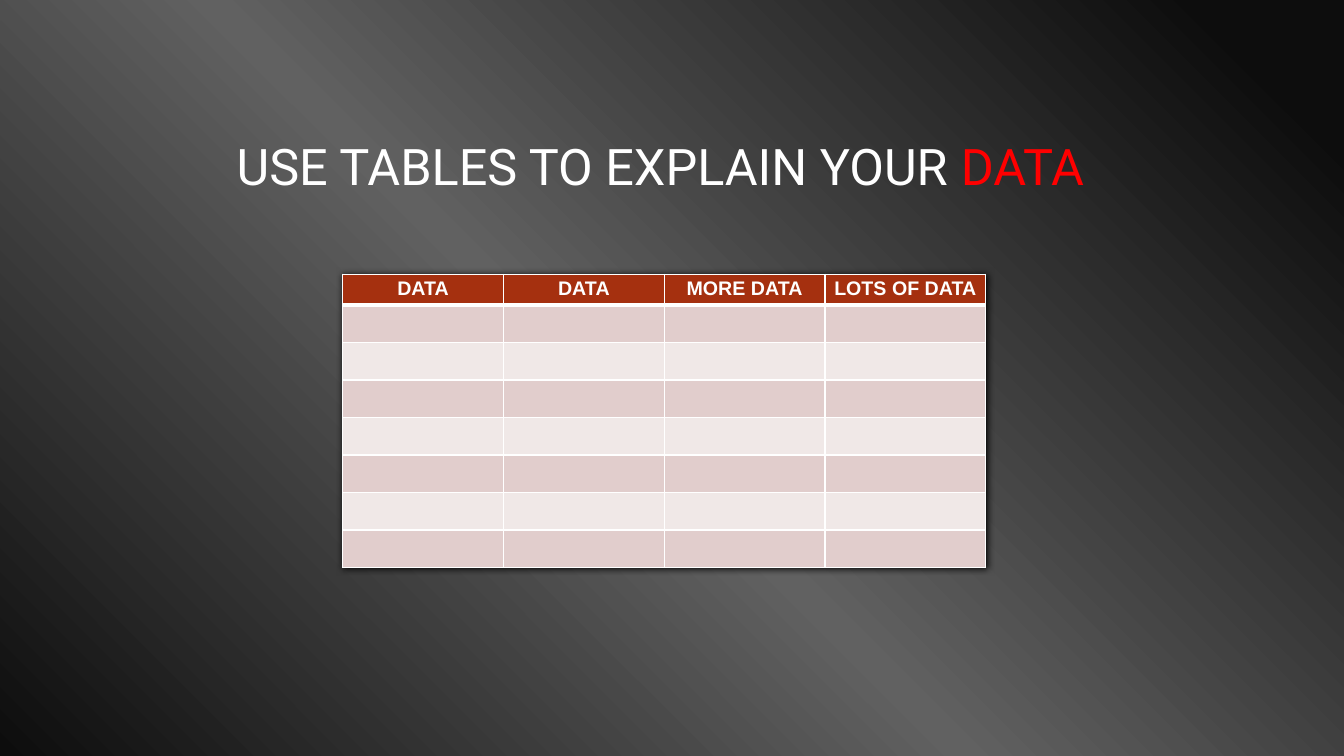
import copy

import pptx
import pptx.dml.color
import pptx.enum.text
import pptx.oxml
import pptx.oxml.ns
import pptx.util

Pt = pptx.util.Pt
RGB = pptx.dml.color.RGBColor.from_string
NAMESPACE = pptx.oxml.ns.nsdecls("a")

THEME = {
    "dark": "0D0D0D",
    "light": "616161",
    "text": "FFFFFF",
    "accent": "FF0000",
    "header": "A5300F",
    "bands": ("E1CDCC", "F0E8E7"),
    "border": "FFFFFF",
    "shadow": "000000",
    "title_font": "Roboto",
    "table_font": "Arial",
    "title_size": 36,
    "header_size": 14,
}


def style_span(span, font, size, color, bold=False):
    span.font.name = font
    span.font.size = Pt(size)
    span.font.color.rgb = RGB(color)
    span.font.bold = bold


def add_border(cell, side, width):
    line = pptx.oxml.parse_xml(
        f'<a:{side} {NAMESPACE} w="{Pt(width)}"><a:solidFill>'
        f'<a:srgbClr val="{THEME["border"]}"/></a:solidFill></a:{side}>'
    )
    cell._tc.get_or_add_tcPr().append(line)


deck = pptx.Presentation()
deck.slide_width = Pt(960)
deck.slide_height = Pt(540)
page = deck.slides.add_slide(deck.slide_layouts[6])

background = page.background.fill
background.gradient()
background.gradient_angle = 225
stop_list = page.element.find(".//" + pptx.oxml.ns.qn("a:gsLst"))
stop_list.append(copy.deepcopy(stop_list[-1]))
stops = ((0.07, THEME["dark"]), (0.54, THEME["light"]), (1, THEME["dark"]))
for stop, (position, color) in zip(background.gradient_stops, stops):
    stop.position = position
    stop.color.rgb = RGB(color)

title = page.shapes.add_textbox(Pt(162), Pt(92.9), Pt(698.4), Pt(54.7))
frame = title.text_frame
frame.word_wrap = True
frame.vertical_anchor = pptx.enum.text.MSO_ANCHOR.BOTTOM
frame.margin_left = frame.margin_right = Pt(7.2)
frame.margin_top = frame.margin_bottom = Pt(7.2)
para = frame.paragraphs[0]
para.line_spacing = 0.9
for words, color in (
    ("USE TABLES TO EXPLAIN YOUR ", THEME["text"]),
    ("DATA", THEME["accent"]),
):
    span = para.add_run()
    span.text = words
    style_span(span, THEME["title_font"], THEME["title_size"], color)

headings = ("DATA", "DATA", "MORE DATA", "LOTS OF DATA")
row_heights = [18.72] + [26.78] * 7
column_width = 114.84
table_frame = page.shapes.add_table(
    len(row_heights), len(headings), Pt(244.8), Pt(195.9),
    Pt(column_width * len(headings)), Pt(sum(row_heights)),
)
table = table_frame.table
table._tbl.tblPr.insert(0, pptx.oxml.parse_xml(
    f'<a:effectLst {NAMESPACE}><a:outerShdw blurRad="{Pt(5)}" dist="0" algn="ctr">'
    f'<a:srgbClr val="{THEME["shadow"]}"/></a:outerShdw></a:effectLst>'
))
for column in table.columns:
    column.width = Pt(column_width)

for row_index, height in enumerate(row_heights):
    table.rows[row_index].height = Pt(height)
    for column_index, heading in enumerate(headings):
        cell = table.cell(row_index, column_index)
        cell.margin_left = cell.margin_right = Pt(5.76)
        cell.margin_top = cell.margin_bottom = Pt(2.6)
        add_border(cell, "lnL", 1)
        add_border(cell, "lnR", 1)
        add_border(cell, "lnT", 3 if row_index == 1 else 1)
        add_border(cell, "lnB", 3 if row_index == 0 else 1)
        cell.fill.solid()
        if row_index == 0:
            cell.fill.fore_color.rgb = RGB(THEME["header"])
            cell.text_frame.text = heading
            para = cell.text_frame.paragraphs[0]
            para.alignment = pptx.enum.text.PP_ALIGN.CENTER
            style_span(para.runs[0], THEME["table_font"], THEME["header_size"], THEME["text"], True)
        else:
            cell.fill.fore_color.rgb = RGB(THEME["bands"][(row_index - 1) % 2])

deck.save("out.pptx")
